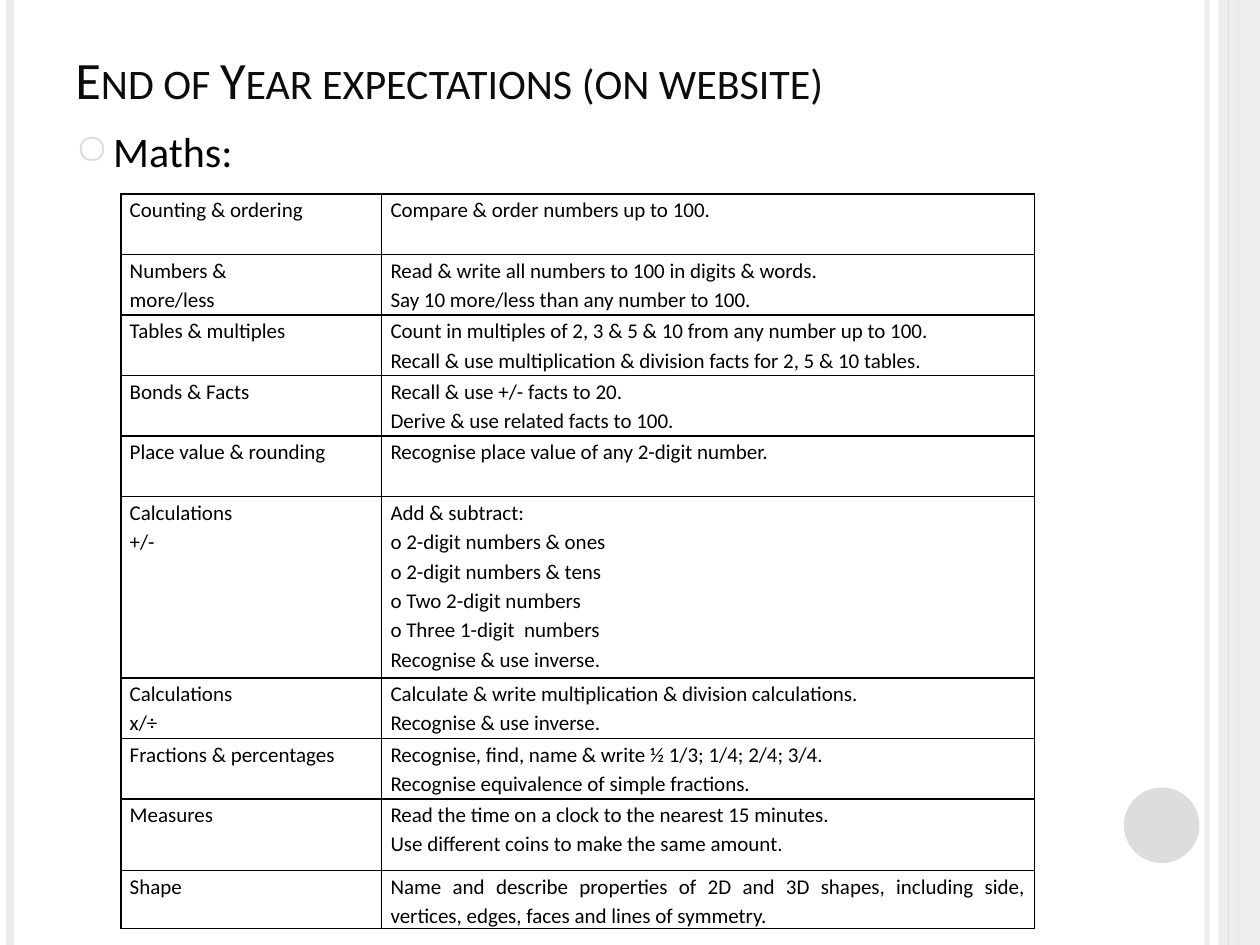
from lxml.etree import SubElement
from pptx import Presentation
from pptx.dml.color import RGBColor
from pptx.enum.shapes import MSO_CONNECTOR as Connector, MSO_SHAPE as Shape
from pptx.enum.text import MSO_ANCHOR as Anchor, PP_ALIGN as Align
from pptx.oxml import parse_xml
from pptx.oxml.ns import nsdecls, qn
from pptx.util import Inches, Pt

BLACK = RGBColor(0x00, 0x00, 0x00)
TITLE_INK = RGBColor(0x0C, 0x0C, 0x0C)
PALE = RGBColor(0xEB, 0xEB, 0xEB)
GREY = RGBColor(0xDD, 0xDD, 0xDD)
FONT = "Calibri"

COLUMN_WIDTHS = [2.07, 5.18]
ROW_HEIGHTS = [0.48] * 5 + [1.44, 0.48, 0.48, 0.57, 0.22]
EXPECTATIONS = [
    (["Counting & ordering"], ["Compare & order numbers up to 100."]),
    (["Numbers &", "more/less"],
     ["Read & write all numbers to 100 in digits & words.",
      "Say 10 more/less than any number to 100."]),
    (["Tables & multiples"],
     ["Count in multiples of 2, 3 & 5 & 10 from any number up to 100.",
      "Recall & use multiplication & division facts for 2, 5 & 10 tables."]),
    (["Bonds & Facts"],
     ["Recall & use +/- facts to 20.", "Derive & use related facts to 100."]),
    (["Place value & rounding"], ["Recognise place value of any 2-digit number."]),
    (["Calculations", "+/-"],
     ["Add & subtract:", "o 2-digit numbers & ones", "o 2-digit numbers & tens",
      "o Two 2-digit numbers", "o Three 1-digit  numbers", "Recognise & use inverse."]),
    (["Calculations", "x/÷"],
     ["Calculate & write multiplication & division calculations.",
      "Recognise & use inverse."]),
    (["Fractions & percentages"],
     ["Recognise, find, name & write ½ 1/3; 1/4; 2/4; 3/4.",
      "Recognise equivalence of simple fractions."]),
    (["Measures"],
     ["Read the time on a clock to the nearest 15 minutes.",
      "Use different coins to make the same amount."]),
    (["Shape"],
     ["Name and describe properties of 2D and 3D shapes, including side, "
      "vertices, edges, faces and lines of symmetry."]),
]


def set_opacity(paint, percent):
    color = paint._xPr.find(".//" + qn("a:srgbClr"))
    SubElement(color, qn("a:alpha"), val=str(percent * 1000))


def add_stripe(page, x, color, width, opacity=None):
    """Draw a vertical line over the full height of the page."""
    stripe = page.shapes.add_connector(
        Connector.STRAIGHT, Inches(x), 0, Inches(x), Inches(7.5))
    stripe.line.color.rgb = color
    stripe.line.width = Pt(width)
    if opacity:
        set_opacity(stripe.line.fill, opacity)
    SubElement(stripe._element.spPr, qn("a:effectLst"))


def add_plain_shape(page, kind, left, top, width, height, color, opacity=None):
    shape = page.shapes.add_shape(
        kind, Inches(left), Inches(top), Inches(width), Inches(height))
    shape.shadow.inherit = False
    shape.fill.solid()
    shape.fill.fore_color.rgb = color
    shape.line.fill.background()
    if opacity:
        set_opacity(shape.fill, opacity)


def write(para, text, size, color=BLACK, small_caps=False, align=None, spacing=None):
    span = para.add_run()
    span.text = text
    span.font.name = FONT
    span.font.size = Pt(size)
    span.font.color.rgb = color
    if small_caps:
        span._r.get_or_add_rPr().set("cap", "small")
    para.alignment = align
    para.line_spacing = spacing


def add_text(page, top, height, text, anchor=Anchor.TOP, **style):
    box = page.shapes.add_textbox(Inches(0.5), Inches(top), Inches(8.17), Inches(height))
    frame = box.text_frame
    frame.word_wrap = True
    frame.vertical_anchor = anchor
    para = frame.paragraphs[0]
    write(para, text, **style)
    return para


def add_ring_bullet(para):
    props = para._p.get_or_add_pPr()
    props.set("marL", str(Inches(0.3)))
    props.set("indent", str(Inches(-0.3)))
    color = SubElement(props, qn("a:buClr"))
    SubElement(color, qn("a:srgbClr"), val=str(GREY))
    SubElement(props, qn("a:buChar"), char="○")


def set_borders(cell):
    props = cell._tc.get_or_add_tcPr()
    for index, side in enumerate(("lnL", "lnR", "lnT", "lnB")):
        props.insert(index, parse_xml(
            f'<a:{side} {nsdecls("a")} w="{Pt(1)}"><a:solidFill>'
            f'<a:srgbClr val="{BLACK}"/></a:solidFill></a:{side}>'))


def fill_cell(cell, lines):
    cell.fill.background()
    set_borders(cell)
    cell.margin_left = cell.margin_right = Inches(0.07)
    cell.margin_top = cell.margin_bottom = 0
    frame = cell.text_frame
    for index, line in enumerate(lines):
        para = frame.add_paragraph() if index else frame.paragraphs[0]
        write(para, line, 12, align=Align.JUSTIFY, spacing=1.15)


def add_expectations(page):
    table = page.shapes.add_table(
        len(EXPECTATIONS), len(COLUMN_WIDTHS), Inches(0.96), Inches(1.54),
        Inches(sum(COLUMN_WIDTHS)), Inches(sum(ROW_HEIGHTS))).table
    table.first_row = table.horz_banding = False
    for column, width in zip(table.columns, COLUMN_WIDTHS):
        column.width = Inches(width)
    for row, height, contents in zip(table.rows, ROW_HEIGHTS, EXPECTATIONS):
        row.height = Inches(height)
        for cell, lines in zip(row.cells, contents):
            fill_cell(cell, lines)


def add_decoration(page):
    add_stripe(page, 9.58, PALE, 3, opacity=93)
    add_stripe(page, 0.08, PALE, 4.5)
    add_stripe(page, 9.83, GREY, 1.5)
    add_plain_shape(page, Shape.RECTANGLE, 9.67, 0, 0.33, 7.5, PALE, opacity=87)
    add_stripe(page, 9.75, GREY, 0.75)
    add_plain_shape(page, Shape.OVAL, 8.92, 6.25, 0.6, 0.6, GREY)


def main():
    deck = Presentation()
    deck.slide_width, deck.slide_height = Inches(10), Inches(7.5)
    page = deck.slides.add_slide(deck.slide_layouts[6])
    add_decoration(page)
    add_text(page, 0.15, 0.77, "End of Year expectations (on website)",
             anchor=Anchor.BOTTOM, size=30, color=TITLE_INK, small_caps=True)
    add_ring_bullet(add_text(page, 0.95, 5.33, "Maths:", size=24))
    add_expectations(page)
    deck.save("out.pptx")


if __name__ == "__main__":
    main()
